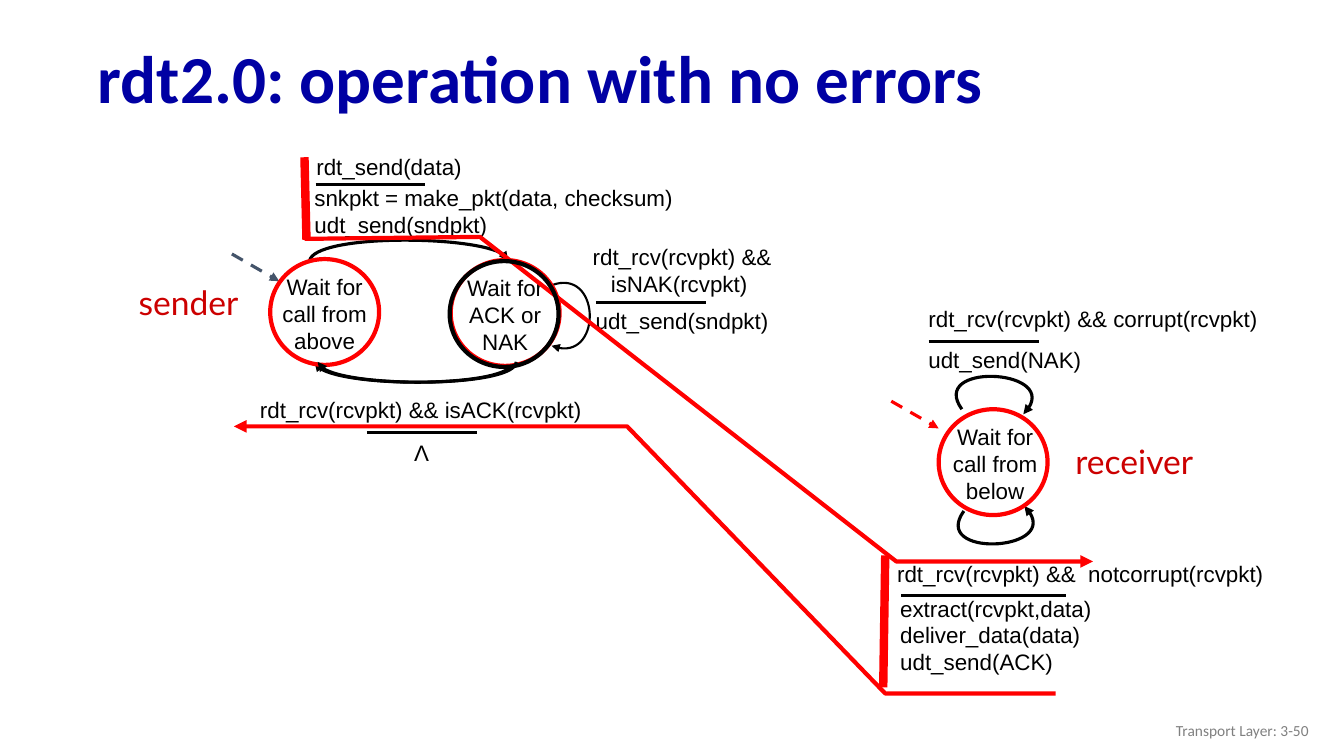
import pptx
import pptx.util
import pptx.dml.color
import pptx.enum.dml
import pptx.enum.shapes
import pptx.enum.text
import pptx.oxml
from pptx.oxml.ns import qn

BLACK, RED, SLATE, WHITE = "000000", "FF0000", "44546A", "FFFFFF"
ALIGN = pptx.enum.text.PP_ALIGN
ANCHOR = pptx.enum.text.MSO_ANCHOR
SIZE = 1.08, 1.05  # state circle
BAR = 1.09  # rule between event and action

deck = pptx.Presentation()
deck.slide_width = pptx.util.Inches(13.33)
deck.slide_height = pptx.util.Inches(7.5)
slide = deck.slides.add_slide(deck.slide_layouts[5])
shapes = slide.shapes


def inch(*vals):
    return [pptx.util.Inches(v) for v in vals]


def color(code):
    return pptx.dml.color.RGBColor.from_string(code)


def apply(item, vals):
    for name, val in vals.items():
        setattr(item, name, val)


def write(frame, lines, size=16, face="Arial", hue=BLACK, align=ALIGN.LEFT,
          bold=False, anchor=ANCHOR.TOP, wrap=True, space=1.0):
    apply(frame, {"word_wrap": wrap, "vertical_anchor": anchor})
    if not wrap:
        frame.auto_size = pptx.enum.text.MSO_AUTO_SIZE.SHAPE_TO_FIT_TEXT
    frame.text = "\n".join(lines)
    for para in frame.paragraphs:
        apply(para, {"alignment": align, "line_spacing": space})
        for run in para.runs:
            apply(run.font, {"size": pptx.util.Pt(size), "name": face, "bold": bold})
            run.font.color.rgb = color(hue)
    return frame


def label(box, *lines, **style):
    return write(shapes.add_textbox(*inch(*box)).text_frame, lines, **style)


def stroke(item, hue, width, arrow=False, dash=False):
    item.line.color.rgb = color(hue)
    item.line.width = pptx.util.Pt(width)
    if dash:
        item.line.dash_style = pptx.enum.dml.MSO_LINE.DASH
    if arrow:
        tail = pptx.oxml.parse_xml(
            '<a:tailEnd xmlns:a="http://schemas.openxmlformats.org/drawingml/2006/main"'
            ' type="triangle"/>')
        item.line._get_or_add_ln().append(tail)


def line(x, y, dx, dy=0, hue=BLACK, width=2.25, **style):
    item = shapes.add_connector(pptx.enum.shapes.MSO_CONNECTOR.STRAIGHT,
                                *inch(x, y, x + dx, y + dy))
    stroke(item, hue, width, **style)
    props = item._element.spPr
    props.append(props.makeelement(qn("a:effectLst"), {}))


def trace(points, hue=BLACK, width=2.25):
    """Draw an open outline with an arrowhead at its last point."""
    spots = [inch(*p) for p in points]
    build = shapes.build_freeform(*spots[0])
    build.add_line_segments(spots[1:], close=False)
    item = build.convert_to_shape()
    item.shadow.inherit = False
    item.fill.background()
    stroke(item, hue, width, arrow=True)
    return item


def curve(x, y, points, width=2.25):
    """Draw one cubic arc: start, two control points, end, relative to x, y."""
    item = trace([(x + px, y + py) for px, py in points], width=width)
    legs = item._element.findall(".//" + qn("a:lnTo"))
    route = legs[0].getparent()
    bend = route.makeelement(qn("a:cubicBezTo"), {})
    for leg in legs:
        bend.append(leg[0])
        route.remove(leg)
    route.append(bend)


def ring(x, y, hue, width=3, fill=None):
    item = shapes.add_shape(pptx.enum.shapes.MSO_SHAPE.OVAL, *inch(x, y, *SIZE))
    item.shadow.inherit = False
    if fill:
        item.fill.solid()
        item.fill.fore_color.rgb = color(fill)
    else:
        item.fill.background()
    stroke(item, hue, width)


def state(x, y, text, wide=1.31, shift=0.0):
    ring(x, y, BLACK, 1.5, WHITE)
    left = x + (SIZE[0] - wide) / 2 + shift
    label((left, y + 0.09, wide, 0.67), text, align=ALIGN.CENTER)


def entry(x, y, hue):
    line(x, y, 0.47, 0.27, hue=hue, arrow=True, dash=True)


def name(x, y, wide, text):
    label((x, y, wide, 0.5), text, size=24, face="Lato", hue="CC0000",
          align=ALIGN.CENTER, wrap=False)


def arc(x, y):
    """Draw the return arc under the two sender states."""
    curve(x, y, [(1.97, 0), (1.97, 0.25), (0.05, 0.27), (0, 0)])


def sender(x, y):
    name(x - 1.08, y + 1.25, 1.3, "sender")
    state(x + 0.38, y + 1.07, "Wait for call from above")
    label((x + 0.74, y - 0.03, 2.47, 0.47), "rdt_send(data)")
    line(x + 0.83, y + 0.33, BAR)
    label((x + 0.72, y + 0.28, 3.98, 0.44),
          "snkpkt = make_pkt(data, checksum)", "udt_send(sndpkt)")
    curve(x + 0.77, y + 1.09, [(0, 0), (0.04, -0.27), (1.97, -0.26), (1.97, 0)])
    arc(x + 0.82, y + 2.09)
    curve(x + 3.17, y + 1.33, [(0, 0), (0.48, -0.18), (0.51, 0.8), (0, 0.6)], 1.5)
    state(x + 2.17, y + 1.08, "Wait for ACK or NAK", 1.18)
    event = label((x + 3.48, y + 0.86, 2.28, 0.69), "rdt_rcv(rcvpkt) &&", "isNAK(rcvpkt)")
    event.paragraphs[1]._p.get_or_add_pPr().set("marL", str(pptx.util.Inches(0.18)))
    line(x + 3.61, y + 1.5, BAR)
    label((x + 3.51, y + 1.5, 1.93, 0.44), "udt_send(sndpkt)")
    label((x + 0.18, y + 2.38, 3.88, 0.31), "rdt_rcv(rcvpkt) && isACK(rcvpkt)")
    line(x + 1.34, y + 2.79, BAR)
    label((x + 1.71, y + 2.81, 0.35, 0.37), "Λ", wrap=False)


def receiver(x, y):
    name(x + 1.7, y + 1.33, 1.5, "receiver")
    label((x + 0.31, y - 0.02, 3.71, 0.34), "rdt_rcv(rcvpkt) && corrupt(rcvpkt)")
    line(x + 0.41, y + 0.39, BAR)
    label((x + 0.31, y + 0.38, 2, 0.28), "udt_send(NAK)")
    curve(x + 0.74, y + 1.06, [(0, 0), (-0.33, -0.46), (1.05, -0.4), (0.61, 0.05)])
    state(x + 0.51, y + 1.06, "Wait for call from below", shift=0.02)
    curve(x + 0.76, y + 2.07, [(0, 0), (-0.33, 0.46), (1.04, 0.4), (0.6, -0.05)])
    entry(x + 0.04, y + 0.98, RED)
    ring(x + 0.51, y + 1.06, RED)
    label((x, y + 2.51, 4.53, 0.77), "rdt_rcv(rcvpkt) &&  notcorrupt(rcvpkt)")
    line(x + 0.14, y + 2.91, 1.63)
    label((x + 0.03, y + 2.85, 2.34, 0.68),
          "extract(rcvpkt,data)", "deliver_data(data)", "udt_send(ACK)")


def trail(x, y):
    """Mark the packet's way to the receiver and the ACK's way back."""
    line(x + 0.72, y + 0.06, 0.02, 0.82, hue=RED, width=6)
    line(x + 6.48, y + 4.01, -0.02, 1.31, hue=RED, width=6)
    for points in ([(0.72, 0.87), (2.46, 0.85), (6.59, 4.07), (8.54, 4.07)],
                   [(8.17, 5.38), (6.48, 5.38), (3.92, 2.73), (0.02, 2.73)]):
        trace([(x + px, y + py) for px, py in points], RED, 3)


def marks(x, y):
    """Ring the sender states above the trail."""
    ring(x + 2.17, y + 1.08, RED)
    entry(x, y + 1.02, SLATE)
    ring(x + 0.38, y + 1.07, RED)
    ring(x + 2.16, y + 1.09, BLACK)
    arc(x + 0.85, y + 2.09)


def heading(x, y, wide, high):
    title = shapes.title
    apply(title, dict(zip(("left", "top", "width", "height"), inch(x, y, wide, high))))
    write(title.text_frame, ["rdt2.0: operation with no errors"], size=48, face="Calibri",
          hue="0000A3", bold=True, anchor=ANCHOR.MIDDLE, space=0.9)


def main():
    heading(0.87, 0.32, 12.14, 0.98)
    sender(2.3, 1.5)
    receiver(8.8, 3)
    trail(2.3, 1.5)
    marks(2.3, 1.5)
    label((10.08, 7.05, 3, 0.4), "Transport Layer: 3-50", size=11, face="Calibri",
          hue="808080", align=ALIGN.RIGHT, anchor=ANCHOR.MIDDLE)
    deck.save("out.pptx")


if __name__ == "__main__":
    main()
